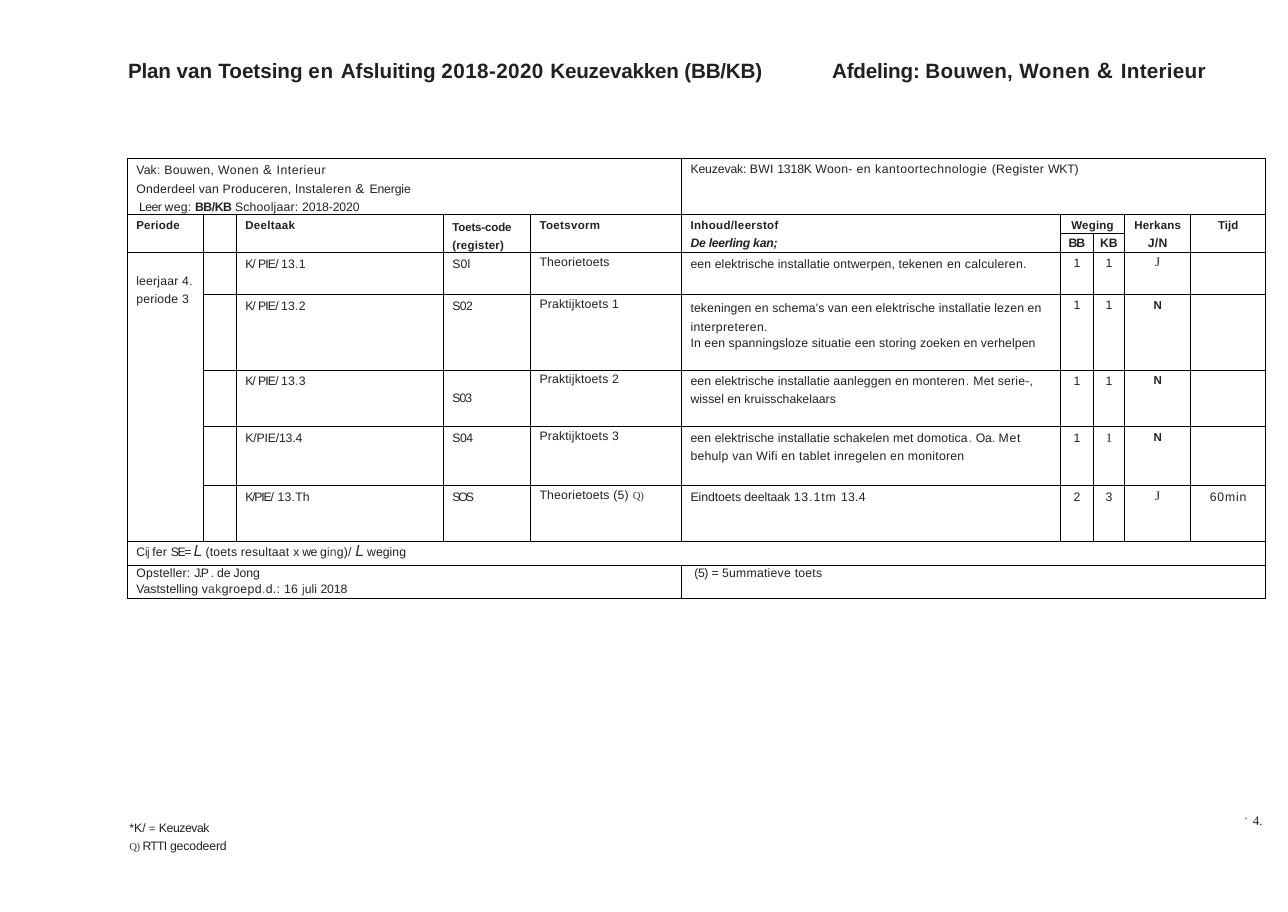
from dataclasses import dataclass

from lxml.etree import SubElement
from pptx import Presentation
from pptx.dml.color import RGBColor
from pptx.enum.text import MSO_ANCHOR, PP_ALIGN
from pptx.oxml.ns import qn
from pptx.util import Cm, Pt

# style: font, size, colour, bold, italic
SANS, SERIF, INK = "Arial", "Times New Roman", "1F2123"
THEME = {
    "title": (SANS, 13.5, INK, True, False),
    "title big": (SANS, 14.5, INK, True, False),
    "head": (SANS, 7.5, INK, True, False),
    "head it": (SANS, 8, INK, True, True),
    "head 8": (SANS, 8, INK, True, False),
    "body": (SANS, 8, INK, False, False),
    "amp": (SANS, 8.5, INK, False, False),
    "small": (SANS, 7, INK, False, False),
    "blue": (SANS, 8, "384B5D", False, False),
    "grey": (SANS, 8, "444444", False, False),
    "pale": (SANS, 8, "606060", False, False),
    "sum": (SANS, 10.5, "313436", False, True),
    "serif": (SERIF, 8.5, INK, False, False),
    "mark": (SERIF, 7, "313436", False, False),
}
LEFT, CENTER = PP_ALIGN.LEFT, PP_ALIGN.CENTER


@dataclass
class Para:
    """Runs are (text, letter spacing in points, style name)."""
    runs: list
    before: float = 0
    line: object = None


def write(tf, paras, align=LEFT):
    for i, para in enumerate(paras):
        p = tf.paragraphs[0] if i == 0 else tf.add_paragraph()
        p.alignment = align
        p.space_before = Pt(para.before)
        if para.line:
            p.line_spacing = para.line
        for text, spacing, style in para.runs:
            r = p.add_run()
            r.text = text
            name, size, color, bold, italic = THEME[style]
            r.font.name, r.font.size = name, Pt(size)
            r.font.bold, r.font.italic = bold, italic
            r.font.color.rgb = RGBColor.from_string(color)
            r._r.get_or_add_rPr().set("spc", str(round(spacing * 100)))


def fill_cell(row, col, paras, top=0.1, align=LEFT, rows=1, cols=1):
    cell = table.cell(row, col)
    if rows > 1 or cols > 1:
        cell.merge(table.cell(row + rows - 1, col + cols - 1))
    cell.margin_top = Cm(top)
    if align == LEFT:
        cell.margin_left, cell.margin_right = Cm(0.2), Cm(0.25)
    write(cell.text_frame, paras, align)


prs = Presentation()
prs.slide_width, prs.slide_height = Cm(29.67), Cm(21)
s = prs.slides.add_slide(prs.slide_layouts[5])

# Headings, footnotes and page number
heading = [Para([("Plan ", -0.1, "title"), ("van ", 0.1, "title"),
                 ("Toetsing ", 0, "title"), ("en ", 0.6, "title"),
                 ("Afsluiting ", 0, "title"), ("2018-2020 ", 0.3, "title"),
                 ("Keuzevakken (BB/KB)", -0.1, "title")])]
department = [Para([("Afdeling: ", -0.1, "title"), ("Bouwen, ", 0.2, "title"),
                    ("Wonen ", 0.4, "title"), ("& ", 0.6, "title big"),
                    ("Interieur", 0.2, "title")])]
footnotes = [Para([("*K/ ", 0, "body"), ("= ", 0.2, "small"), ("Keuzevak", -0.3, "body")]),
             Para([("Q) ", -0.2, "mark"), ("RTTI ", -0.5, "body"),
                   ("gecodeerd", -0.1, "body")], before=2.2)]
page = [Para([("4.", 0, "serif")])]
for left, top, width, height, paras in (
        (2.95, 1.34, 15.1, 0.64, heading), (19.17, 1.3, 9, 0.68, department),
        (2.98, 18.88, 3, 0.9, footnotes), (28.63, 18.72, 0.7, 0.43, page)):
    if paras is heading:
        sp = s.shapes.title
        sp.left, sp.top, sp.width, sp.height = Cm(left), Cm(top), Cm(width), Cm(height)
    else:
        sp = s.shapes.add_textbox(Cm(left), Cm(top), Cm(width), Cm(height))
    tf = sp.text_frame
    tf.word_wrap = True
    tf.vertical_anchor = MSO_ANCHOR.TOP
    tf.margin_left = tf.margin_right = tf.margin_top = tf.margin_bottom = 0
    write(tf, paras)

pPr = tf.paragraphs[0]._p.get_or_add_pPr()
pPr.set("marL", str(Cm(0.23)))
pPr.set("indent", str(-Cm(0.2)))
SubElement(SubElement(pPr, qn("a:buClr")), qn("a:srgbClr")).set("val", "606060")
SubElement(pPr, qn("a:buChar")).set("char", "·")

# Table grid
widths = [1.75, 0.76, 4.77, 2.01, 3.48, 8.72, 0.76, 0.72, 1.52, 1.73]
heights = [1.3, 0.42, 0.45, 0.97, 1.73, 1.31, 1.36, 1.29, 0.53, 0.78]
table = s.shapes.add_table(len(heights), len(widths), Cm(2.94), Cm(3.65),
                           Cm(sum(widths)), Cm(sum(heights))).table
table.first_row = table.horz_banding = False
for column, width in zip(table.columns, widths):
    column.width = Cm(width)
for row, height in zip(table.rows, heights):
    row.height = Cm(height)
for cell in table.iter_cells():
    cell.margin_left = cell.margin_right = cell.margin_top = cell.margin_bottom = 0
    cell.text_frame.paragraphs[0]._p.get_or_add_endParaRPr().set("sz", "800")
    tcPr = cell._tc.get_or_add_tcPr()
    for side in ("a:lnL", "a:lnR", "a:lnT", "a:lnB"):
        ln = SubElement(tcPr, qn(side), w=str(Pt(0.75)))
        SubElement(SubElement(ln, qn("a:solidFill")), qn("a:srgbClr")).set("val", "000000")
    cell.fill.background()

# Subject rows
fill_cell(0, 0, [
    Para([("Vak", 0.1, "body"), (": ", 0.1, "blue"), ("Bouwen, ", 0.2, "body"),
          ("Wonen ", 0.3, "body"), ("& ", 0.4, "amp"), ("Interieur", 0.3, "body")],
         line=Pt(12)),
    Para([("Onderdeel van Produceren, ", 0.1, "body"), ("lnstaleren ", 0.2, "body"),
          ("& ", 0.5, "amp"), ("Energie", -0.1, "body")], 0.4, Pt(12)),
    Para([(" Leer ", -0.4, "body"), ("weg", 0.1, "body"), (": ", 0.1, "blue"),
          ("BB/KB ", -0.3, "head 8"), ("Schooljaar: ", 0.1, "body"),
          ("2018-2020", -0.1, "body")], line=Pt(12))], top=0, cols=5)
fill_cell(0, 5, [Para([
    ("Keuzevak: ", -0.1, "body"), ("BWI ", 0.1, "body"), ("1318K ", -0.1, "body"),
    ("Woon- ", 0.2, "body"), ("en kantoortechnologie ", 0.3, "body"),
    ("(Register ", 0.2, "body"), ("WKT)", -0.2, "body")])], top=0.08, cols=5)

# Column headings
for col, text, spacing in ((0, "Periode", 0.1), (2, "Deeltaak", 0.2), (4, "Toetsvorm", 0.2)):
    fill_cell(1, col, [Para([(text, spacing, "head")])], rows=2)
table.cell(1, 1).merge(table.cell(2, 1))
fill_cell(1, 3, [Para([("Toets-code ", -0.1, "head"), (" (register)", 0.1, "head")],
                      line=Pt(11.8))], top=0.02, rows=2)
fill_cell(1, 5, [Para([("Inhoud/leerstof", 0.2, "head")]),
                 Para([("De leerling kan;", -0.2, "head it")], before=2.5)], rows=2)
fill_cell(1, 6, [Para([("Weging", 0.1, "head")])], align=CENTER, cols=2)
fill_cell(2, 6, [Para([("BB", -0.8, "head 8")])], 0.08, CENTER)
fill_cell(2, 7, [Para([("KB", -0.1, "head 8")])], 0.08, CENTER)
fill_cell(1, 8, [Para([("Herkans", 0.1, "head")]),
                 Para([("J/N", 0.1, "head 8")], before=3)], align=CENTER, rows=2)
fill_cell(1, 9, [Para([("Tijd", 0, "head")])], align=CENTER, rows=2)

# Tasks: number, code, code spacing, form, content, weights, resit
fill_cell(3, 0, [Para([("leerjaar 4", 0.1, "body"), (".", 0.1, "grey")]),
                 Para([("periode 3", 0.1, "body")], before=2.4)], top=0.5, rows=5)
tasks = [
    ("1", "S0l", 0.1, "Theorietoets",
     [Para([("een elektrische installatie ontwerpen, tekenen ", 0.05, "body"),
            ("en calculeren.", 0.15, "body")])], "1", "1", "J"),
    ("2", "S02", -0.4, "Praktijktoets 1",
     [Para([("tekeningen en schema's van een elektrische installatie lezen en ", 0.07, "body"),
            (" interpreteren.", 0.2, "body")], line=Pt(12.3)),
      Para([("In een spanningsloze situatie een storing zoeken en verhelpen", 0.05, "body")],
           before=1.3)], "1", "1", "N"),
    ("3", "S03", -0.6, "Praktijktoets 2",
     [Para([("een elektrische installatie aanleggen en monteren", 0.06, "body"),
            (". ", 0.2, "grey"), ("Met serie-, ", 0.1, "body"),
            ("wissel en kruisschakelaars", 0, "body")], line=1.25)], "1", "1", "N"),
    ("4", "S04", -0.3, "Praktijktoets 3",
     [Para([("een elektrische installatie schakelen met domotica", 0.05, "body"),
            (". ", 0.1, "pale"), ("Oa", -0.2, "body"), (". ", -0.2, "grey"),
            ("Met ", 0.5, "body"),
            (" behulp van Wifi en tablet inregelen en monitoren", 0.14, "body")],
          line=1.25)], "1", "1", "N"),
    ("Th", "SOS", -1.4, "Theorietoets (5) ",
     [Para([("Eindtoets deeltaak ", -0.05, "body"), ("13.1tm ", 0.6, "body"),
            ("13.4", 0.1, "body")])], "2", "3", "J"),
]
for row, (number, code, spacing, form, content, bb, kb, resit) in enumerate(tasks, 3):
    task = [("K/ ", -0.7, "body"), ("PIE/ ", -0.6, "body"), ("13", 0.1, "body"),
            (".", 0.1, "grey"), (number, 0.1, "body")]
    if number == "4":
        task = [("K/PIE/13.4", -0.1, "body")]
    elif number == "Th":
        task[:2] = [("K/PIE/", -0.8, "body"), (" ", 0.1, "body")]
    mark = [("Q)", -0.1, "mark")] if number == "Th" else []
    fill_cell(row, 2, [Para(task)], 0.11)
    fill_cell(row, 3, [Para([(code, spacing, "body")])], 0.5 if number == "3" else 0.1)
    fill_cell(row, 4, [Para([(form, 0.1, "body")] + mark)], 0.06)
    fill_cell(row, 5, content, 0.03 if content[0].line else 0.1)
    fill_cell(row, 6, [Para([(bb, 0, "body")])], 0.09, CENTER)
    fill_cell(row, 7, [Para([(kb, 0, "serif" if number == "4" else "body")])], 0.09, CENTER)
    fill_cell(row, 8, [Para([(resit, 0, "serif" if resit == "J" else "head")])],
              0.06 if resit == "J" else 0.1, CENTER)
fill_cell(7, 9, [Para([("60min", 0.5, "body")])], 0.09, CENTER)

# Closing rows
fill_cell(8, 0, [Para([
    ("C", -0.6, "body"), ("ij ", -0.6, "grey"), ("fe", 0.1, "body"), ("r ", 0.1, "body"),
    ("SE= ", -0.9, "body"), ("L ", -0.7, "sum"), ("(toets resultaat ", 0.1, "body"),
    ("x ", -0.4, "body"), ("we ", -0.5, "body"), ("g", 0.1, "body"), ("in", 0.1, "grey"),
    ("g)/ ", 0.1, "body"), ("L ", -0.9, "sum"), ("weging", 0, "body")])], top=0, cols=10)
fill_cell(9, 0, [
    Para([("Opsteller: ", 0.1, "body"), ("J.P ", -1, "body"), (". ", -0.3, "grey"),
          ("de Jong", -0.1, "body")]),
    Para([("Vaststelling ", 0, "body"), ("v", 0.2, "body"), ("ak", 0.2, "grey"),
          ("groepd", 0.2, "body"), (".", 0.2, "pale"), ("d.: 16 ", 0.2, "body"),
          ("j", 0, "grey"), ("uli ", 0, "body"), ("2018", -0.1, "body")], before=1.8)],
    top=0.02, cols=5)
fill_cell(9, 5, [Para([("(5) ", -0.3, "body"), ("= ", 0, "body"),
                       ("5ummatieve toets", 0.13, "body")])], top=0.02, cols=5)
table.cell(9, 5).margin_left = Cm(0.29)

prs.save("out.pptx")
